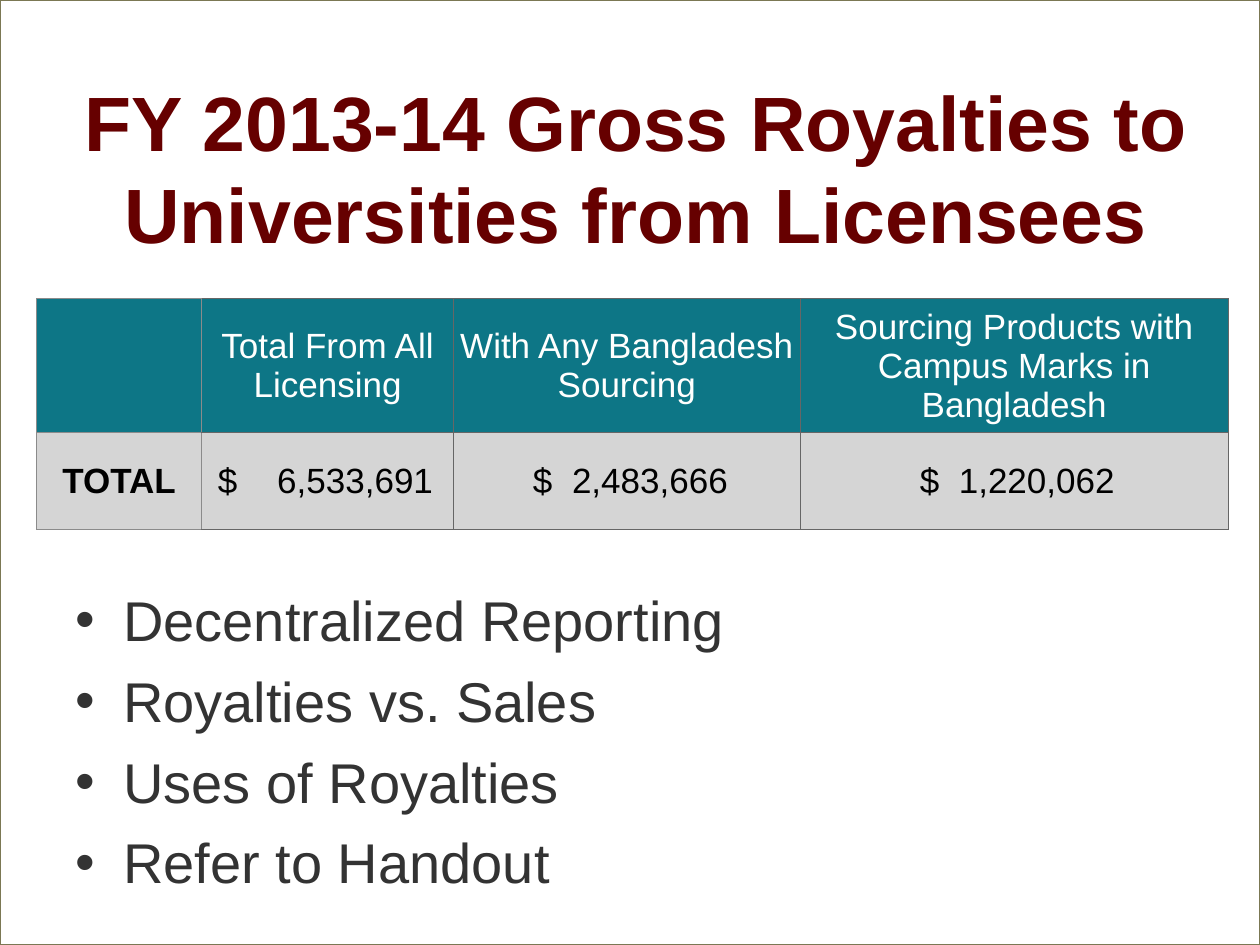
from lxml import etree
from pptx import Presentation
from pptx.dml.color import RGBColor
from pptx.enum.shapes import MSO_SHAPE as SHAPE
from pptx.enum.text import MSO_ANCHOR as ANCHOR, PP_ALIGN as ALIGN
from pptx.oxml import parse_xml
from pptx.oxml.ns import nsdecls, qn
from pptx.util import Inches, Pt

CREAM = RGBColor(0xE0, 0xDA, 0xA1)
OLIVE = RGBColor(0x7B, 0x78, 0x54)
WHITE = RGBColor(0xFF, 0xFF, 0xFF)
HEADER_WHITE = RGBColor(0xFF, 0xFF, 0xFE)
BLACK = RGBColor(0, 0, 0)
MAROON = RGBColor(0x66, 0, 0)
CHARCOAL = RGBColor(0x33, 0x33, 0x33)
TEAL = RGBColor(0x0D, 0x76, 0x86)
SILVER = RGBColor(0xD5, 0xD5, 0xD5)
RULE = RGBColor(0x66, 0x66, 0x66)
LIGHT_RULE = RGBColor(0x8B, 0x8B, 0x8B)


def write(p, text, size, color, bold=False):
    r = p.add_run()
    r.text = text
    r.font.color.rgb = color
    for name, value in dict(name="Arial", size=Pt(size), bold=bold).items():
        setattr(r.font, name, value)


def set_indent(p, left, hanging):
    pPr = p._p.get_or_add_pPr()
    pPr.set("marL", str(Inches(left)))
    pPr.set("indent", str(-Inches(hanging)))
    return pPr


prs = Presentation()
prs.slide_width, prs.slide_height = Inches(10), Inches(7.5)
s = prs.slides.add_slide(prs.slide_layouts[6])
s.background.fill.solid()
s.background.fill.fore_color.rgb = CREAM

# White panel with a thin outline
sp = s.shapes.add_shape(SHAPE.RECTANGLE, 0, 0, prs.slide_width, prs.slide_height)
sp.shadow.inherit = False
sp.fill.solid()
sp.fill.fore_color.rgb = WHITE
sp.line.color.rgb = OLIVE
sp.line.width = Pt(0.75)

# Title
tf = s.shapes.add_textbox(Inches(0.55), Inches(0.7), Inches(9), Inches(1.25)).text_frame
tf.word_wrap = True
tf.vertical_anchor = ANCHOR.MIDDLE
p = tf.paragraphs[0]
p.alignment = ALIGN.CENTER
write(p, "FY 2013-14 Gross Royalties to Universities from Licensees", 44, MAROON, True)

# Royalties table
headers = ["", "Total From All Licensing", "With Any Bangladesh Sourcing",
           "Sourcing Products with Campus Marks in Bangladesh"]
totals = ["TOTAL", "$\t6,533,691", "$\t2,483,666", "$\t1,220,062"]
amount_indents = [None, (0.59, 0.47), (0.93, 0.31), (1.25, 0.31)]
table = s.shapes.add_table(2, 4, Inches(0.29), Inches(2.37),
                           Inches(9.46), Inches(1.83)).table
for col, width in zip(table.columns, [1.31, 2, 2.75, 3.4]):
    col.width = Inches(width)
for row, height in zip(table.rows, [1.06, 0.77]):
    row.height = Inches(height)

for i, (texts, fill, color) in enumerate([(headers, TEAL, HEADER_WHITE),
                                          (totals, SILVER, BLACK)]):
    for j, text in enumerate(texts):
        cell = table.cell(i, j)
        margin = Inches(0.01)
        for name, value in dict(margin_left=margin, margin_right=margin, margin_top=margin,
                                margin_bottom=0, vertical_anchor=ANCHOR.MIDDLE).items():
            setattr(cell, name, value)
        p = cell.text_frame.paragraphs[0]
        p.alignment = ALIGN.CENTER
        if "\t" in text:
            # A hanging indent lines up the amount after the dollar sign
            p.alignment = ALIGN.LEFT
            set_indent(p, *amount_indents[j])
        if text:
            write(p, text, 20, color, text == "TOTAL")

        # Borders go before the fill in the cell properties
        tcPr = cell._tc.get_or_add_tcPr()
        for side in "LRTB":
            light = j == 0 or (j == 1 and side == "L")
            tcPr.append(parse_xml(
                f'<a:ln{side} {nsdecls("a")} w="{Pt(0.25)}"><a:solidFill>'
                f'<a:srgbClr val="{LIGHT_RULE if light else RULE}"/>'
                f'</a:solidFill></a:ln{side}>'))
        cell.fill.solid()
        cell.fill.fore_color.rgb = fill

# Bullet list
tf = s.shapes.add_textbox(Inches(0.5), Inches(4.55), Inches(8.92), Inches(2.5)).text_frame
tf.word_wrap = True
tf.margin_top = Inches(0.1)
for i, text in enumerate(["Decentralized Reporting", "Royalties vs. Sales",
                          "Uses of Royalties", "Refer to Handout"]):
    p = tf.paragraphs[0] if i == 0 else tf.add_paragraph()
    p.space_before = Pt(7.7 if i else 0)
    pPr = set_indent(p, 0.38, 0.38)
    etree.SubElement(pPr, qn("a:buFont"), typeface="Arial")
    etree.SubElement(pPr, qn("a:buChar"), char="•")
    write(p, text, 32, CHARCOAL)

prs.save("out.pptx")
